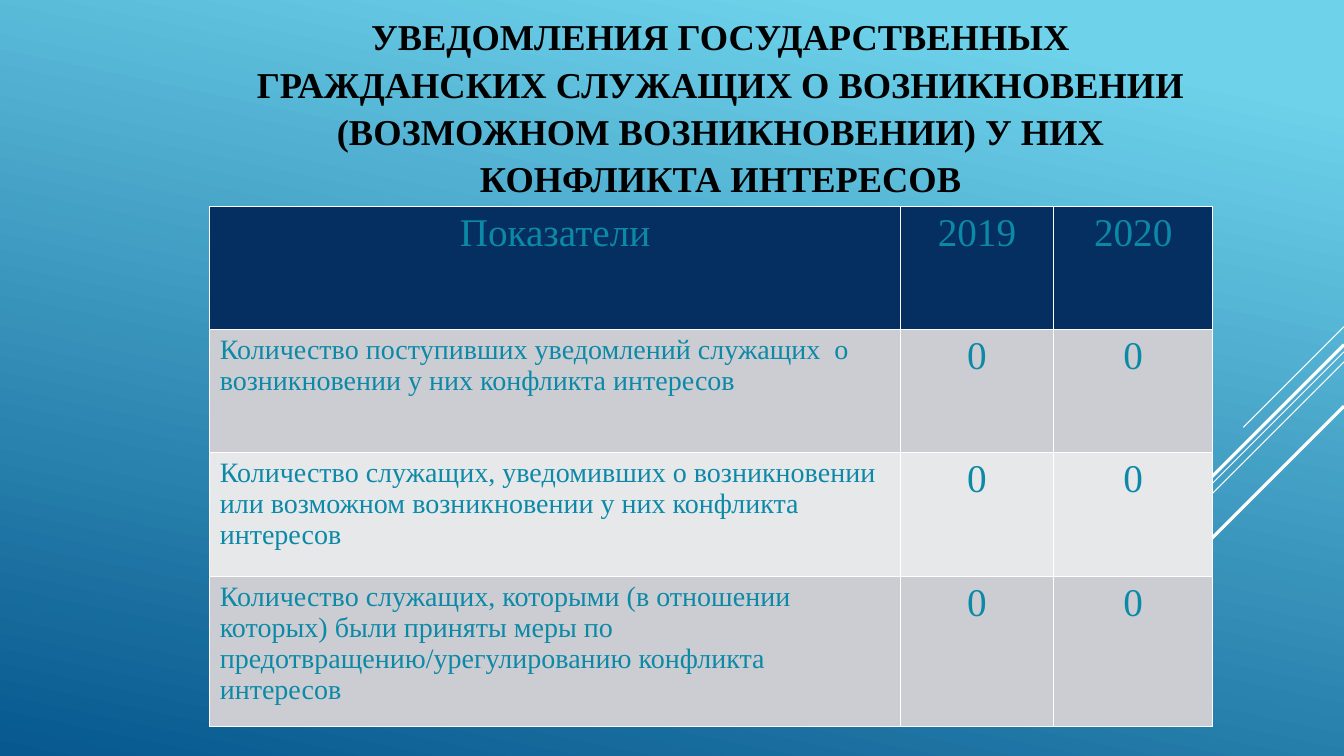
from lxml import etree
from pptx import Presentation
from pptx.dml.color import RGBColor
from pptx.enum.shapes import MSO_CONNECTOR
from pptx.enum.text import MSO_ANCHOR, PP_ALIGN as Align
from pptx.oxml.ns import qn
from pptx.util import Inches, Pt

FONT = "Times New Roman"
WHITE, BLACK, TEAL, NAVY = "FFFFFF", "000000", "0D89A8", "052F61"
BANDS = ["CCCDD2", "E7E8EA"]
TITLE = ("УВЕДОМЛЕНИЯ ГОСУДАРСТВЕННЫХ ГРАЖДАНСКИХ СЛУЖАЩИХ О ВОЗНИКНОВЕНИИ "
         "(ВОЗМОЖНОМ ВОЗНИКНОВЕНИИ) У НИХ КОНФЛИКТА ИНТЕРЕСОВ")
ROWS = [
    ("Показатели", "2019", "2020"),
    ("Количество поступивших уведомлений служащих  о возникновении "
     "у них конфликта интересов", "0", "0"),
    ("Количество служащих, уведомивших о возникновении или возможном "
     "возникновении у них конфликта интересов", "0", "0"),
    ("Количество служащих, которыми (в отношении которых) были приняты меры "
     "по предотвращению/урегулированию конфликта интересов", "0", "0"),
]
COLUMN_WIDTHS = [6.85, 1.52, 1.58]
ROW_HEIGHTS = [1.22, 1.22, 1.23, 1.49]
# Diagonals from the right edge: top, horizontal run, line width
DIAGONALS = [(3.24, 1.0, 0.75), (3.49, 3.26, 0.75), (3.59, 2.07, 0.75),
             (3.42, 1.91, 2.25), (4.03, 1.39, 2.25)]


def rgb(color):
    return RGBColor.from_string(color)


def write(frame, text, size, color, align, bold=False):
    paragraph = frame.paragraphs[0]
    paragraph.text = text
    paragraph.alignment = align
    font = paragraph.font
    font.name, font.size, font.bold = FONT, Pt(size), bold
    font.color.rgb = rgb(color)
    return paragraph


def paint_background(slide):
    fill = slide.background.fill
    fill.gradient()
    fill.gradient_angle = 258
    for stop, position, color in zip(fill.gradient_stops, (0.1, 1), ("6ED2EB", "06588E")):
        stop.position = position
        stop.color.rgb = rgb(color)


def add_diagonals(slide, right):
    for top, run, width in DIAGONALS:
        line = slide.shapes.add_connector(
            MSO_CONNECTOR.STRAIGHT, Inches(right), Inches(top),
            Inches(right - run), Inches(top + run))
        line.line.color.rgb = rgb(WHITE)
        line.line.width = Pt(width)
        etree.SubElement(line._element.spPr, qn("a:effectLst"))


def add_title(slide, left, top, width, height):
    box = slide.shapes.add_textbox(Inches(left), Inches(top), Inches(width), Inches(height))
    frame = box.text_frame
    frame.word_wrap = True
    frame.vertical_anchor = MSO_ANCHOR.MIDDLE
    paragraph = write(frame, TITLE, 26, BLACK, Align.CENTER, bold=True)
    paragraph.line_spacing = 1.08


def set_borders(cell, color, width):
    properties = cell._tc.get_or_add_tcPr()
    for index, side in enumerate(("lnL", "lnR", "lnT", "lnB")):
        border = etree.Element(qn(f"a:{side}"), w=str(Pt(width)))
        fill = etree.SubElement(border, qn("a:solidFill"))
        etree.SubElement(fill, qn("a:srgbClr"), val=color)
        properties.insert(index, border)


def add_indicator_table(slide, left, top):
    table = slide.shapes.add_table(
        len(ROWS), len(COLUMN_WIDTHS), Inches(left), Inches(top),
        Inches(sum(COLUMN_WIDTHS)), Inches(sum(ROW_HEIGHTS))).table
    for column, width in zip(table.columns, COLUMN_WIDTHS):
        column.width = Inches(width)
    for row, height in zip(table.rows, ROW_HEIGHTS):
        row.height = Inches(height)
    for i, texts in enumerate(ROWS):
        for j, text in enumerate(texts):
            cell = table.cell(i, j)
            cell.fill.solid()
            cell.fill.fore_color.rgb = rgb(BANDS[(i - 1) % 2] if i else NAVY)
            set_borders(cell, WHITE, 1)
            is_label = i > 0 and j == 0
            write(cell.text_frame, text, 20 if is_label else 28, TEAL,
                  Align.LEFT if is_label else Align.CENTER)


def main():
    presentation = Presentation()
    presentation.slide_width = Inches(13.33)
    presentation.slide_height = Inches(7.5)
    slide = presentation.slides.add_slide(presentation.slide_layouts[6])
    paint_background(slide)
    add_diagonals(slide, 13.33)
    add_title(slide, 2.27, 0.22, 9.76, 1.65)
    add_indicator_table(slide, 2.08, 2.05)
    presentation.save("out.pptx")


if __name__ == "__main__":
    main()
